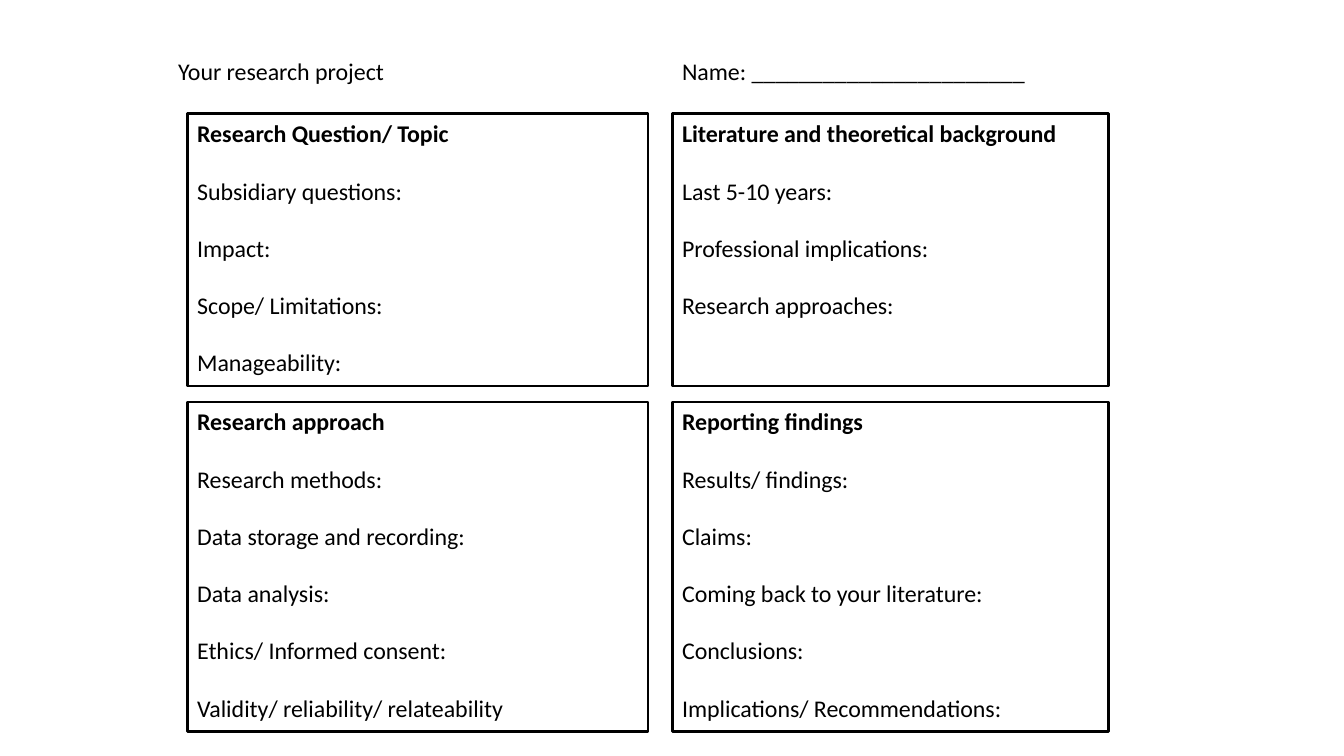
from pptx import Presentation
from pptx.dml.color import RGBColor
from pptx.enum.shapes import MSO_SHAPE as Shape
from pptx.enum.text import MSO_ANCHOR as Anchor, PP_ALIGN as Align
from pptx.oxml.ns import qn
from pptx.util import Cm, Pt
from lxml.etree import SubElement

BLACK = RGBColor(0, 0, 0)
FONT = "Calibri"
SIZE = Pt(17.1)
GAP = Pt(20.4)

# Grid: (start, length) in centimetres
COLS = [(4.72, 11.61), (16.94, 11)]
ROWS = [(2.87, 6.86), (10.13, 8.31)]

# Panels by row, then column; the first line is the heading
PANELS = [
    [
        ["Research Question/ Topic", "Subsidiary questions:", "Impact:",
         "Scope/ Limitations:", "Manageability:"],
        ["Literature and theoretical background", "Last 5-10 years:",
         "Professional implications:", "Research approaches:"],
    ],
    [
        ["Research approach", "Research methods:",
         "Data storage and recording:", "Data analysis:",
         "Ethics/ Informed consent:", "Validity/ reliability/ relateability"],
        ["Reporting findings", "Results/ findings:", "Claims:",
         "Coming back to your literature:", "Conclusions:",
         "Implications/ Recommendations:"],
    ],
]


def style(para, bold=False):
    para.alignment = Align.LEFT
    font = para.font
    font.name, font.size, font.bold = FONT, SIZE, bold
    font.color.rgb = BLACK


def add_head(slide, title, label):
    box = slide.shapes.add_textbox(Cm(4.24), Cm(0), Cm(22.2), Cm(3.68))
    frame = box.text_frame
    frame.word_wrap = True
    frame.vertical_anchor = Anchor.MIDDLE
    para = frame.paragraphs[0]
    para.text = f"{title}\t{label}"
    # Tab stop that lines the label up with the right column
    tabs = SubElement(para._p.get_or_add_pPr(), qn("a:tabLst"))
    SubElement(tabs, qn("a:tab"), pos=str(Cm(12.7)), algn="l")
    para.line_spacing = 0.9
    style(para)


def add_panel(slide, col, row, lines):
    (left, width), (top, height) = col, row
    panel = slide.shapes.add_shape(
        Shape.RECTANGLE, Cm(left), Cm(top), Cm(width), Cm(height))
    panel.shadow.inherit = False
    panel.fill.background()
    panel.line.color.rgb = BLACK
    panel.line.width = Pt(2)
    frame = panel.text_frame
    frame.word_wrap = True
    frame.vertical_anchor = Anchor.TOP
    for i, line in enumerate(lines):
        para = frame.add_paragraph() if i else frame.paragraphs[0]
        para.text = line
        if i:
            para.space_before = GAP
        style(para, bold=i == 0)


def main():
    deck = Presentation()
    deck.slide_width, deck.slide_height = Cm(33.87), Cm(19.05)
    slide = deck.slides.add_slide(deck.slide_layouts[6])

    # Header line
    add_head(slide, "Your research project", "Name: " + "_" * 23)

    # Two by two panels
    for row, group in zip(ROWS, PANELS):
        for col, lines in zip(COLS, group):
            add_panel(slide, col, row, lines)

    deck.save("out.pptx")


if __name__ == "__main__":
    main()
